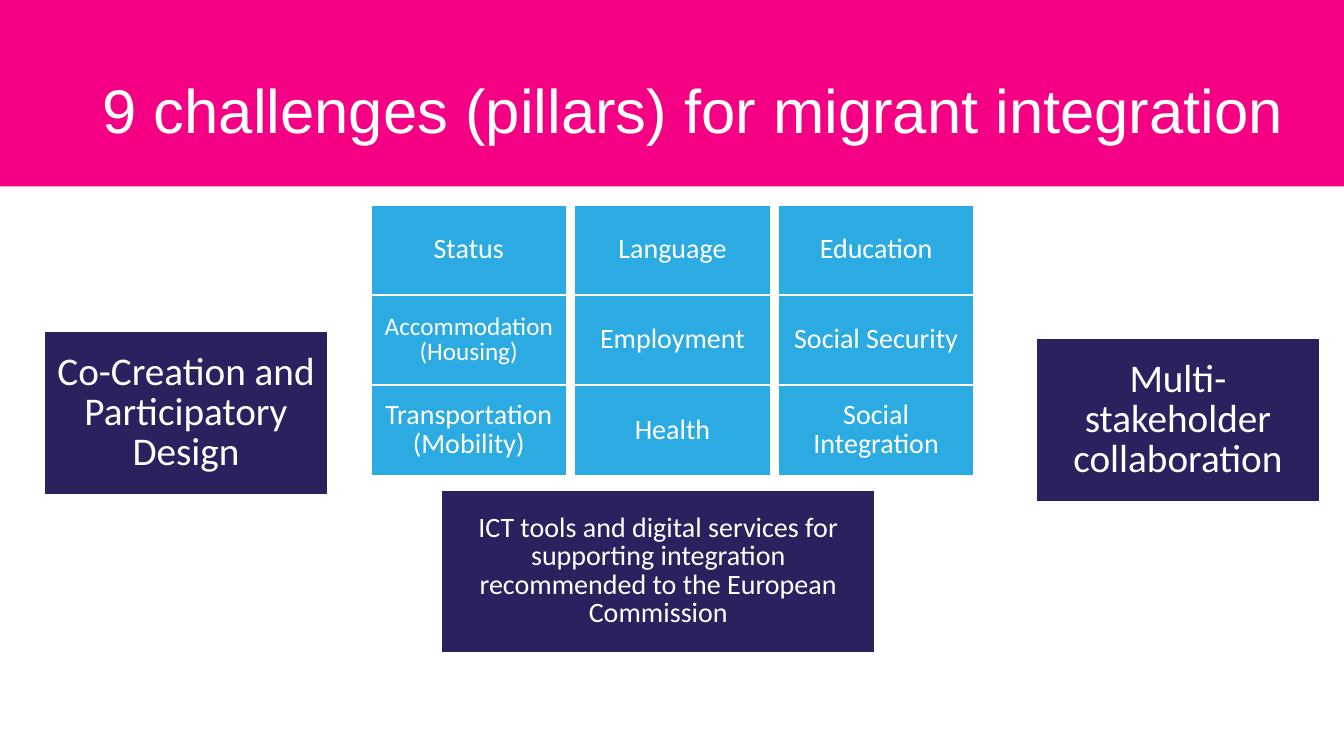
from dataclasses import dataclass

from pptx import Presentation
from pptx.dml.color import RGBColor
from pptx.enum.shapes import MSO_SHAPE
from pptx.enum.text import MSO_ANCHOR, PP_ALIGN
from pptx.util import Pt


@dataclass(frozen=True)
class Theme:
    pink: str = "F50084"
    blue: str = "2CABE2"
    navy: str = "29225E"
    white: str = "FFFFFF"
    head: int = 44
    large: int = 28
    body: int = 20
    small: int = 18
    title: str = "Arial"
    text: str = "Calibri"


THEME = Theme()

PILLARS = [
    ["Status", "Language", "Education"],
    ["Accommodation (Housing)", "Employment", "Social Security"],
    ["Transportation (Mobility)", "Health", "Social Integration"],
]
SMALL = {"Accommodation (Housing)"}

PANELS = [
    ("Co-Creation and Participatory Design", 31.7, 236.9, 202.3, THEME.large),
    ("Multi-stakeholder collaboration", 740.2, 241.9, 202.3, THEME.large),
    ("ICT tools and digital services for supporting integration "
     "recommended to the European Commission", 315.4, 349.9, 309.6, THEME.body),
]


def write(shape, text, font, size, align, space):
    frame = shape.text_frame
    frame.word_wrap = True
    frame.vertical_anchor = MSO_ANCHOR.MIDDLE
    para = frame.paragraphs[0]
    para.alignment = align
    para.line_spacing = space
    run = para.add_run()
    run.text = text
    run.font.name = font
    run.font.size = Pt(size)
    run.font.color.rgb = RGBColor.from_string(THEME.white)


def add_rect(slide, left, top, width, height, fill):
    rect = slide.shapes.add_shape(
        MSO_SHAPE.RECTANGLE, Pt(left), Pt(top), Pt(width), Pt(height))
    rect.shadow.inherit = False
    rect.fill.solid()
    rect.fill.fore_color.rgb = RGBColor.from_string(fill)
    rect.line.fill.background()
    return rect


def add_card(slide, text, left, top, width, height, fill, size):
    card = add_rect(slide, left, top, width, height, fill)
    card.line.color.rgb = RGBColor.from_string(THEME.white)
    card.line.width = Pt(1)
    write(card, text, THEME.text, size, PP_ALIGN.CENTER, 0.85)


def add_title(slide, text):
    add_rect(slide, 0, 0, 960, 133.2, THEME.pink)
    box = slide.shapes.add_textbox(Pt(66.2), Pt(28.8), Pt(878.4), Pt(104.4))
    write(box, text, THEME.title, THEME.head, PP_ALIGN.LEFT, 0.9)


def add_grid(slide):
    for row, names in enumerate(PILLARS):
        for col, name in enumerate(names):
            size = THEME.small if name in SMALL else THEME.body
            add_card(slide, name, 265 + col * 145.5, 146.4 + row * 64.5,
                     139.7, 64.2, THEME.blue, size)


def main():
    deck = Presentation()
    deck.slide_width, deck.slide_height = Pt(960), Pt(540)
    slide = deck.slides.add_slide(deck.slide_layouts[6])
    add_title(slide, "9 challenges (pillars) for migrant integration")
    add_grid(slide)
    for text, left, top, width, size in PANELS:
        add_card(slide, text, left, top, width, 116.6, THEME.navy, size)
    deck.save("out.pptx")


if __name__ == "__main__":
    main()
